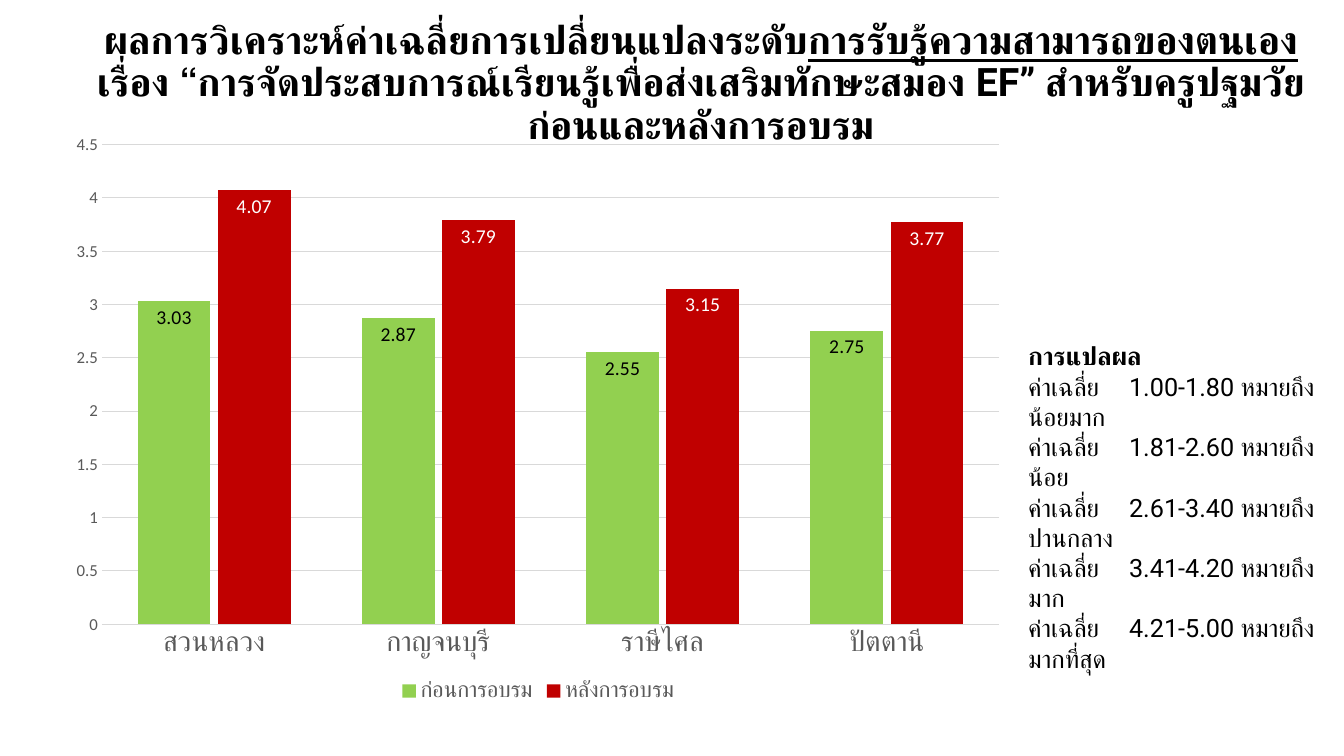
"""Build a slide comparing mean scores before and after training in four areas."""
from dataclasses import dataclass, field
from typing import Any

from pptx import Presentation
from pptx.chart.chart import Chart
from pptx.chart.data import CategoryChartData
from pptx.dml.color import RGBColor
from pptx.enum.chart import XL_CHART_TYPE, XL_LABEL_POSITION, XL_LEGEND_POSITION, XL_TICK_MARK
from pptx.enum.text import MSO_ANCHOR, MSO_AUTO_SIZE, PP_ALIGN
from pptx.slide import Slide
from pptx.text.text import Font
from pptx.util import Inches, Pt

CLUSTERED = XL_CHART_TYPE.COLUMN_CLUSTERED
INSIDE_END = XL_LABEL_POSITION.INSIDE_END
BOTTOM = XL_LEGEND_POSITION.BOTTOM
NO_TICK = XL_TICK_MARK.NONE
TOP, MIDDLE = MSO_ANCHOR.TOP, MSO_ANCHOR.MIDDLE
NO_FIT, GROW = MSO_AUTO_SIZE.NONE, MSO_AUTO_SIZE.SHAPE_TO_FIT_TEXT
LEFT, CENTER = PP_ALIGN.LEFT, PP_ALIGN.CENTER


@dataclass(frozen=True)
class Theme:
    """Hold the colours, fonts and type sizes of the slide."""

    ink: str = "000000"
    paper: str = "FFFFFF"
    muted: str = "595959"
    grid: str = "D9D9D9"
    before: str = "92D050"
    after: str = "C00000"
    text_font: str = "Roboto"
    chart_font: str = "Calibri"
    title_size: int = 28
    body_size: int = 18
    chart_size: int = 10
    category_size: int = 20
    value_size: int = 12
    legend_size: int = 16
    label_size: int = 14
    line_width: float = 0.75


THEME = Theme()


@dataclass(frozen=True)
class Frame:
    """Give a position and size in inches."""

    left: float
    top: float
    width: float
    height: float

    def lengths(self) -> list[Inches]:
        """Return the four lengths in drawing order."""
        return [Inches(n) for n in (self.left, self.top, self.width, self.height)]


@dataclass(frozen=True)
class Span:
    """Describe a stretch of text with its own format."""

    text: str
    format: dict[str, Any] = field(default_factory=dict)


@dataclass(frozen=True)
class TextBlock:
    """Describe a text box and its paragraphs of spans."""

    frame: Frame
    paras: list[list[Span]]
    size: int
    anchor: MSO_ANCHOR = TOP
    auto_size: MSO_AUTO_SIZE = NO_FIT
    align: PP_ALIGN = LEFT
    line_spacing: float = 1.0


@dataclass(frozen=True)
class ScoreSeries:
    """Describe one series of mean scores."""

    name: str
    scores: tuple[float, ...]
    fill: str
    label_color: str


BOLD = {"bold": True}
TITLE = TextBlock(
    Frame(0.76, 0.11, 12.38, 1.45),
    [[
        Span("ผลการวิเคราะห์ค่าเฉลี่ยการเปลี่ยนแปลงระดับ", BOLD),
        Span("การรับรู้ความสามารถของตนเอง\v", BOLD | {"underline": True}),
        Span("เรื่อง “การจัดประสบการณ์เรียนรู้เพื่อส่งเสริมทักษะสมอง EF” "
             "สำหรับครูปฐมวัย ก่อนและหลังการอบรม", BOLD),
    ]],
    THEME.title_size, anchor=MIDDLE, align=CENTER, line_spacing=0.9,
)
LEVELS = {
    "1.00-1.80": "น้อยมาก",
    "1.81-2.60": "น้อย",
    "2.61-3.40": "ปานกลาง",
    "3.41-4.20": "มาก",
    "4.21-5.00": "มากที่สุด",
}
SCALE_KEY = TextBlock(
    Frame(10.1, 3.33, 3.4, 1.92),
    [[Span("การแปลผล", BOLD)]]
    + [[Span(f"ค่าเฉลี่ย\t{scores} หมายถึง {level}")] for scores, level in LEVELS.items()],
    THEME.body_size, auto_size=GROW,
)
CHART_FRAME = Frame(0.57, 1.22, 9.53, 5.79)
AREAS = ("สวนหลวง", "กาญจนบุรี", "ราษีไศล", "ปัตตานี")
SERIES = (
    ScoreSeries("ก่อนการอบรม", (3.03, 2.87, 2.55, 2.75), THEME.before, THEME.ink),
    ScoreSeries("หลังการอบรม", (4.07, 3.79, 3.15, 3.77), THEME.after, THEME.paper),
)


def set_values(target: Any, values: dict[str, Any]) -> None:
    """Set each named attribute of the target."""
    for name, value in values.items():
        setattr(target, name, value)


def style_font(font: Font, name: str, size: int, color: str, **extra: Any) -> None:
    """Apply a typeface, size, colour and further format values."""
    set_values(font, {"name": name, "size": Pt(size)} | extra)
    font.color.rgb = RGBColor.from_string(color)


def add_text(page: Slide, block: TextBlock) -> None:
    """Draw a text block on the page."""
    box = page.shapes.add_textbox(*block.frame.lengths()).text_frame
    set_values(box, {"word_wrap": True, "auto_size": block.auto_size,
                     "vertical_anchor": block.anchor})
    for index, spans in enumerate(block.paras):
        para = box.add_paragraph() if index else box.paragraphs[0]
        set_values(para, {"alignment": block.align, "line_spacing": block.line_spacing})
        for span in spans:
            for position, line in enumerate(span.text.split("\v")):
                if position:
                    para.add_line_break()
                if line:
                    run = para.add_run()
                    run.text = line
                    style_font(run.font, THEME.text_font, block.size, THEME.ink, **span.format)


def style_axes(chart: Chart) -> None:
    """Format the category axis, value axis and gridlines."""
    categories, values = chart.category_axis, chart.value_axis
    for axis, size in ((categories, THEME.category_size), (values, THEME.value_size)):
        set_values(axis, {"major_tick_mark": NO_TICK, "minor_tick_mark": NO_TICK})
        style_font(axis.tick_labels.font, THEME.chart_font, size, THEME.muted)
    set_values(values, {"minimum_scale": 0, "maximum_scale": 4.5, "major_unit": 0.5,
                        "has_major_gridlines": True})
    values.format.line.fill.background()
    for line in (categories.format.line, values.major_gridlines.format.line):
        line.color.rgb = RGBColor.from_string(THEME.grid)
        line.width = Pt(THEME.line_width)


def add_score_chart(page: Slide) -> None:
    """Draw the clustered columns of mean scores."""
    data = CategoryChartData()
    data.categories = AREAS
    for entry in SERIES:
        data.add_series(entry.name, entry.scores)
    chart = page.shapes.add_chart(CLUSTERED, *CHART_FRAME.lengths(), data).chart
    set_values(chart, {"has_title": False, "has_legend": True})
    style_font(chart.font, THEME.chart_font, THEME.chart_size, THEME.ink)
    set_values(chart.legend, {"position": BOTTOM, "include_in_layout": False})
    style_font(chart.legend.font, THEME.chart_font, THEME.legend_size, THEME.muted)
    style_axes(chart)
    plot = chart.plots[0]
    set_values(plot, {"gap_width": 98, "overlap": -10, "vary_by_categories": False})
    for series, entry in zip(plot.series, SERIES):
        series.format.fill.solid()
        series.format.fill.fore_color.rgb = RGBColor.from_string(entry.fill)
        labels = series.data_labels
        set_values(labels, {"show_value": True, "position": INSIDE_END})
        style_font(labels.font, THEME.chart_font, THEME.label_size, entry.label_color)


def main() -> None:
    """Build and save the deck."""
    deck = Presentation()
    set_values(deck, {"slide_width": Inches(13.33), "slide_height": Inches(7.5)})
    page = deck.slides.add_slide(deck.slide_layouts[6])
    add_text(page, TITLE)
    add_score_chart(page)
    add_text(page, SCALE_KEY)
    deck.save("out.pptx")


if __name__ == "__main__":
    main()
